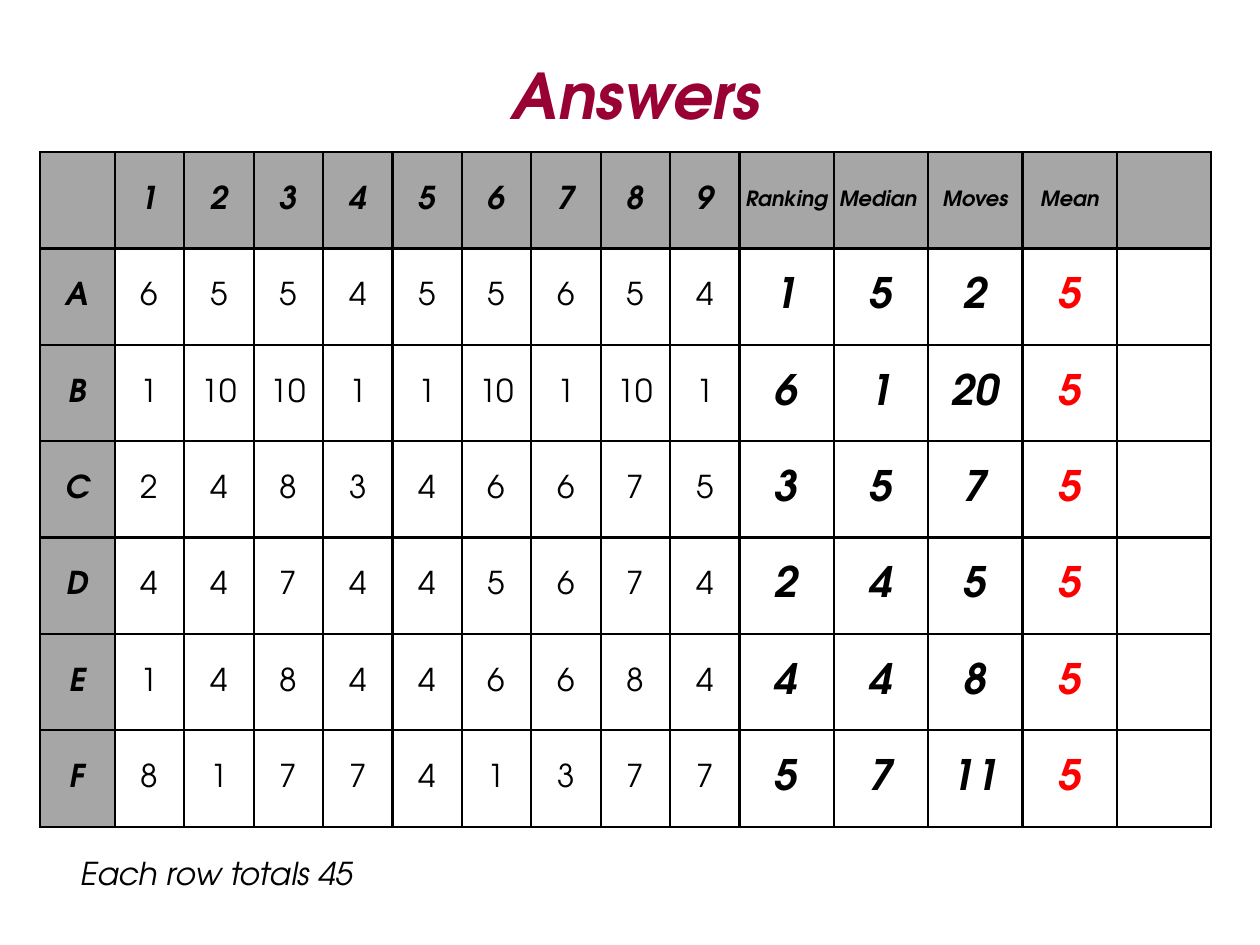
from lxml.etree import SubElement
from pptx import Presentation
from pptx.dml.color import RGBColor
from pptx.enum.text import MSO_ANCHOR as Anchor, PP_ALIGN as Align
from pptx.oxml.ns import qn
from pptx.util import Pt

PX = 914400 // 126
FONT = "TeX Gyre Adventor"
BLACK, RED, WINE, GREY = "000000", "FF0000", "990033", "A6A6A6"

TITLE = "Answers"
NOTE = "Each row totals 45"
HEAD = ["", *"123456789", "Ranking", "Median ", "Moves", "Mean", ""]
# row name, nine scores, then ranking, median, moves and mean
ROWS = [
    ("A", [6, 5, 5, 4, 5, 5, 6, 5, 4], [1, 5, 2, 5]),
    ("B", [1, 10, 10, 1, 1, 10, 1, 10, 1], [6, 1, 20, 5]),
    ("C", [2, 4, 8, 3, 4, 6, 6, 7, 5], [3, 5, 7, 5]),
    ("D", [4, 4, 7, 4, 4, 5, 6, 7, 4], [2, 4, 5, 5]),
    ("E", [1, 4, 8, 4, 4, 6, 6, 8, 4], [4, 4, 8, 5]),
    ("F", [8, 1, 7, 7, 4, 1, 3, 7, 7], [5, 7, 11, 5]),
]
GROUPS = [(1, 75), (9, 625), (5, 472)]  # columns, px they share
LEFT, TOP, WIDE, HIGH = 40, 152, 1172, 675
STATS, MEAN = 10, 13  # first summary column, mean column


def px(n):
    return int(n * PX)


def color(code):
    return RGBColor.from_string(code)


def write(frame, text, size=18, ink=BLACK, bold=False, italic=False,
          align=Align.LEFT):
    par = frame.paragraphs[0]
    par.alignment = align
    run = par.add_run()
    run.text = text
    font = run.font
    font.name, font.size = FONT, Pt(size)
    font.bold, font.italic = bold, italic
    font.color.rgb = color(ink)


def place(shape, left, top, width, height):
    shape.left, shape.top = px(left), px(top)
    shape.width, shape.height = px(width), px(height)


def border(cell):
    props = cell._tc.get_or_add_tcPr()
    for n, side in enumerate(("lnL", "lnR", "lnT", "lnB")):
        line = props.makeelement(qn("a:" + side), {"w": str(Pt(1.5))})
        fill = SubElement(line, qn("a:solidFill"))
        SubElement(fill, qn("a:srgbClr"), val=BLACK)
        props.insert(n, line)  # lines come before the cell's fill


def style(row, col):
    """Text format of the cell at this row and column."""
    if row == 0:
        return dict(size=12 if col >= STATS else 18, bold=True, italic=True)
    if col == 0:
        return dict(bold=True, italic=True)
    if col >= STATS:
        return dict(size=24, bold=True, italic=True,
                    ink=RED if col == MEAN else BLACK)
    return {}


def add_grid(slide):
    data = [HEAD] + [[name, *scores, *stats, ""]
                     for name, scores, stats in ROWS]
    grid = slide.shapes.add_table(len(data), len(HEAD), px(LEFT), px(TOP),
                                  px(WIDE), px(HIGH)).table
    widths = [share / count for count, share in GROUPS for _ in range(count)]
    for col, width in zip(grid.columns, widths):
        col.width = px(width)
    for r, line in enumerate(data):
        grid.rows[r].height = px(HIGH / len(data))
        for c, value in enumerate(line):
            cell = grid.cell(r, c)
            cell.margin_left = cell.margin_right = cell.margin_top = px(1)
            cell.margin_bottom = 0
            cell.vertical_anchor = Anchor.MIDDLE
            if r == 0 or c == 0:
                cell.fill.solid()
                cell.fill.fore_color.rgb = color(GREY)
            else:
                cell.fill.background()
            border(cell)
            if value != "":
                write(cell.text_frame, str(value), align=Align.CENTER,
                      **style(r, c))


def main():
    deck = Presentation()
    deck.slide_width, deck.slide_height = px(1260), px(945)
    slide = deck.slides.add_slide(deck.slide_layouts[5])
    add_grid(slide)

    note = slide.shapes.add_textbox(px(68), px(848), px(353), px(50))
    note.text_frame.word_wrap = True
    write(note.text_frame, NOTE, italic=True)

    title = slide.shapes.title
    place(title, 499, 50, 278, 89)
    title.text_frame.word_wrap = False
    title.text_frame.vertical_anchor = Anchor.TOP
    write(title.text_frame, TITLE, size=36, ink=WINE, bold=True, italic=True)

    deck.save("out.pptx")


if __name__ == "__main__":
    main()
